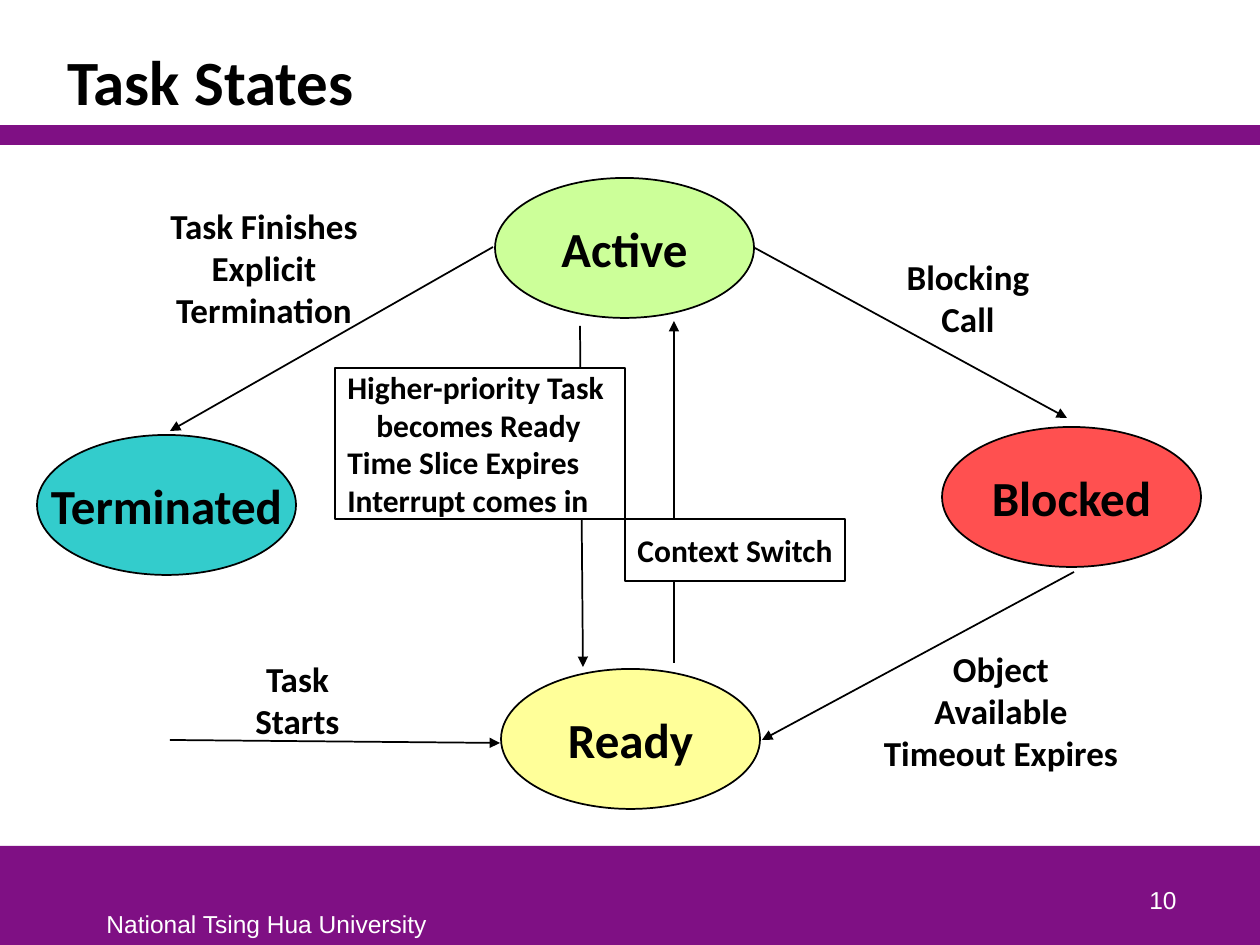
from dataclasses import dataclass

from lxml import etree
from pptx import Presentation
from pptx.dml.color import RGBColor
from pptx.enum.shapes import MSO_CONNECTOR, MSO_SHAPE
from pptx.enum.text import MSO_ANCHOR, PP_ALIGN
from pptx.oxml.ns import qn
from pptx.util import Emu, Pt

RECTANGLE, OVAL = MSO_SHAPE.RECTANGLE, MSO_SHAPE.OVAL
STRAIGHT = MSO_CONNECTOR.STRAIGHT
TOP, MIDDLE, BOTTOM = MSO_ANCHOR.TOP, MSO_ANCHOR.MIDDLE, MSO_ANCHOR.BOTTOM
LEFT, CENTER, RIGHT = PP_ALIGN.LEFT, PP_ALIGN.CENTER, PP_ALIGN.RIGHT
EMU_PER_PX = 914400 / 126


@dataclass(frozen=True)
class Theme:
    """Colours, fonts and type sizes of the slide."""
    purple: str = "7F1084"
    black: str = "000000"
    white: str = "FFFFFF"
    active: str = "CCFF99"
    ready: str = "FFFF99"
    blocked: str = "FF5050"
    terminated: str = "33CCCC"
    body_font: str = "Calibri"
    footer_font: str = "Arial"
    title_size: int = 36
    state_size: int = 28
    label_size: int = 20
    note_size: int = 18
    footer_size: int = 14


THEME = Theme()


def px(length):
    """Turn pixels into EMU."""
    return Emu(round(length * EMU_PER_PX))


def place(box, left, top, width, height):
    """Return EMU bounds of a part placed relative to a region box."""
    return [px(n) for n in (box[0] + left, box[1] + top, width, height)]


def write(frame, text, size, align=CENTER, anchor=TOP, wrap=False,
          font=THEME.body_font, color=THEME.black, bold=True):
    """Fill a text frame and format its runs."""
    frame.text = text
    frame.word_wrap = wrap
    frame.vertical_anchor = anchor
    for paragraph in frame.paragraphs:
        paragraph.alignment = align
        for run in paragraph.runs:
            run.font.name = font
            run.font.size = Pt(size)
            run.font.bold = bold
            run.font.color.rgb = RGBColor.from_string(color)


def add_text(slide, bounds, text, size, **style):
    """Add a text box and return its frame."""
    frame = slide.shapes.add_textbox(*bounds).text_frame
    write(frame, text, size, **style)
    return frame


def add_block(slide, preset, bounds, fill, line_width=0):
    """Add a filled shape, outlined when a line width is given."""
    block = slide.shapes.add_shape(preset, *bounds)
    block.shadow.inherit = False
    block.fill.solid()
    block.fill.fore_color.rgb = RGBColor.from_string(fill)
    if line_width:
        block.line.color.rgb = RGBColor.from_string(THEME.black)
        block.line.width = Pt(line_width)
    else:
        block.line.fill.background()
    return block


def add_arrow(slide, box, x1, y1, x2, y2):
    """Add a black arrow between two points of a region box."""
    start = place(box, x1, y1, 0, 0)[:2]
    end = place(box, x2, y2, 0, 0)[:2]
    arrow = slide.shapes.add_connector(STRAIGHT, *start, *end)
    arrow.line.color.rgb = RGBColor.from_string(THEME.black)
    arrow.line.width = Pt(1)
    etree.SubElement(arrow.line._get_or_add_ln(), qn("a:tailEnd"), type="triangle")
    etree.SubElement(arrow._element.spPr, qn("a:effectLst"))


def draw_header(slide, box):
    """Draw the title above its purple rule."""
    add_block(slide, RECTANGLE, place(box, 0, 125, box[2], 20), THEME.purple)
    title = add_text(slide, place(box, 55, 32, 1130, 93), "Task States",
                     THEME.title_size, align=LEFT, anchor=BOTTOM, wrap=True)
    title.paragraphs[0].line_spacing = 0.85


def draw_footer(slide, box):
    """Draw the purple band with university and page number."""
    style = dict(font=THEME.footer_font, color=THEME.white, bold=False)
    add_block(slide, RECTANGLE, place(box, 0, 0, *box[2:]), THEME.purple)
    add_text(slide, place(box, 94, 57, 348, 42), "National Tsing Hua University",
             THEME.footer_size, align=LEFT, **style)
    add_text(slide, place(box, 927, 12, 262, 63), "10", THEME.footer_size,
             align=RIGHT, anchor=BOTTOM, wrap=True, **style)


def draw_diagram(slide, box):
    """Draw the task states, their transitions and the transition labels."""
    states = [
        ("Active", 495, 33, THEME.active),
        ("Ready", 501, 524, THEME.ready),
        ("Blocked", 942, 282, THEME.blocked),
        ("Terminated", 37, 290, THEME.terminated),
    ]
    transitions = [
        (674, 518, 674, 176),
        (580, 181, 583, 522),
        (755, 103, 1067, 273),
        (1074, 427, 762, 595),
        (170, 595, 500, 598),
        (493, 102, 170, 286),
    ]
    notes = [
        ("Context Switch", CENTER, (625, 374, 220, 62)),
        ("Higher-priority Task\nbecomes Ready\nTime Slice Expires\nInterrupt comes in",
         LEFT, (335, 223, 290, 151)),
    ]
    labels = [
        ("Blocking Call", True, (873, 104, 190, 97)),
        ("Object\vAvailable\nTimeout Expires", False, (870, 496, 262, 140)),
        ("Task Finishes\nExplicit Termination", True, (131, 53, 266, 139)),
        ("Task\vStarts", False, (242, 506, 111, 97)),
    ]
    for name, left, top, fill in states:
        state = add_block(slide, OVAL, place(box, left, top, 259, 140), fill, 1)
        write(state.text_frame, name, THEME.state_size, anchor=MIDDLE)
    for points in transitions:
        add_arrow(slide, box, *points)
    for text, align, bounds in notes:
        note = add_block(slide, RECTANGLE, place(box, *bounds), THEME.white, 0.75)
        write(note.text_frame, text, THEME.note_size, align=align, anchor=MIDDLE)
    continuation = note.text_frame.paragraphs[1]
    continuation._p.get_or_add_pPr().set("marL", str(px(29)))
    for text, wrap, bounds in labels:
        add_text(slide, place(box, *bounds), text, THEME.label_size, wrap=wrap)


def main():
    """Build and save the slide."""
    deck = Presentation()
    deck.slide_width, deck.slide_height = px(1260), px(945)
    slide = deck.slides.add_slide(deck.slide_layouts[6])
    draw_header(slide, (0, 0, 1260, 145))
    draw_footer(slide, (0, 846, 1260, 99))
    draw_diagram(slide, (0, 145, 1260, 701))
    deck.save("out.pptx")


if __name__ == "__main__":
    main()
